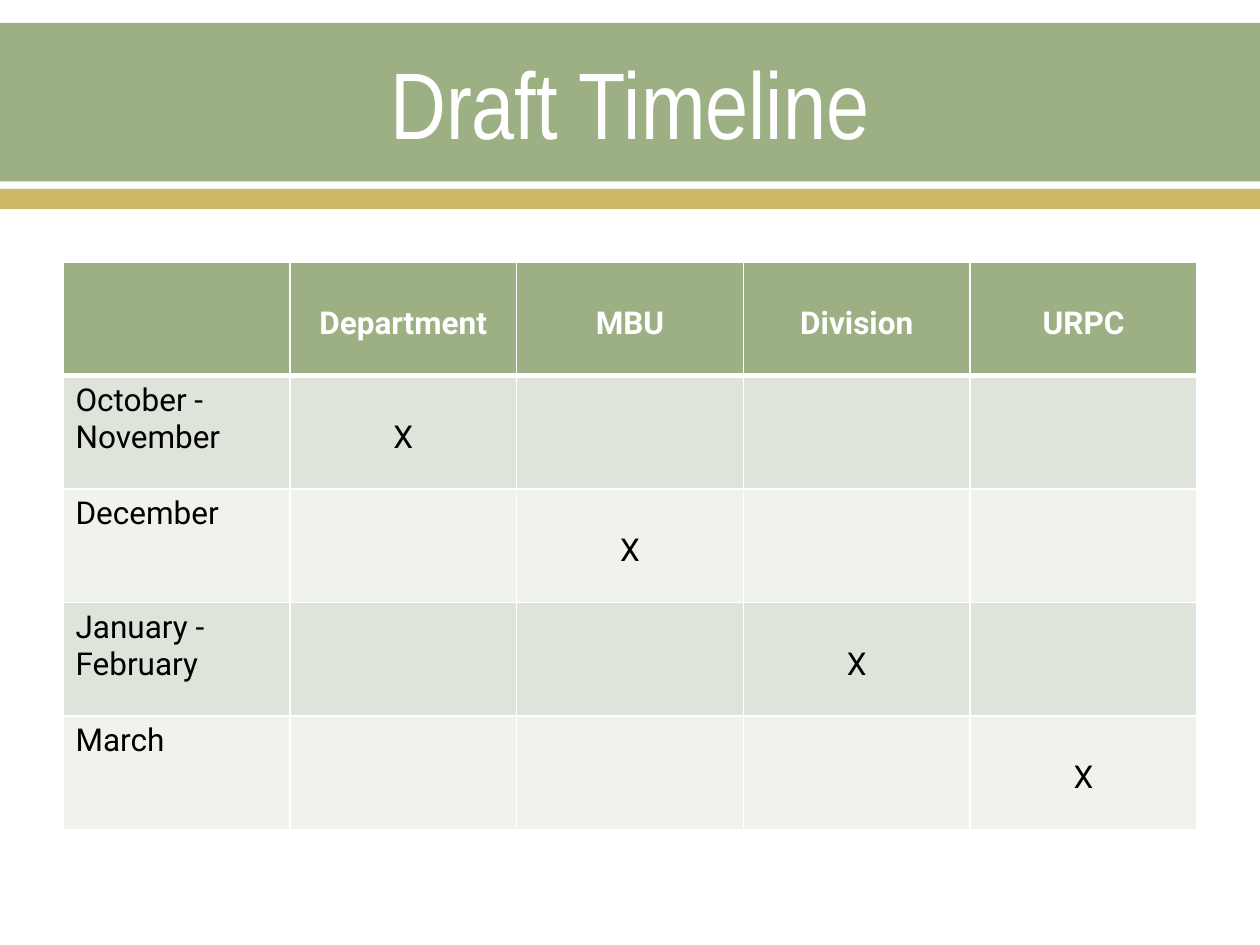
"""Build the Draft Timeline slide with a table of months and review levels."""
from lxml import etree
from pptx import Presentation
from pptx import util as u
from pptx.dml.color import RGBColor
from pptx.enum import shapes, text
from pptx.oxml.ns import qn

GREEN, GOLD, WHITE, BLACK = "9CB084", "CEB966", "FFFFFF", "000000"
BAND_FILLS = ["DEE4D9", "EFF2ED"]
LEVELS = ["Department", "MBU", "Division", "URPC"]
MONTHS = ["October - November", "December", "January - February", "March"]


def paint(color_format, color):
    color_format.rgb = RGBColor.from_string(color)


def write(paragraph, words, color, font_format, paragraph_format):
    run = paragraph.add_run()
    run.text = words
    paint_target = run.font.color
    paint(paint_target, color)
    for name, value in font_format.items():
        setattr(run.font, name, value)
    for name, value in paragraph_format.items():
        setattr(paragraph, name, value)


presentation = Presentation()
presentation.slide_width = u.Cm(25.4)
presentation.slide_height = u.Cm(19.05)
slide = presentation.slides.add_slide(presentation.slide_layouts[6])

for top, height, color in [(0.46, 3.2, GREEN), (3.81, 0.41, GOLD)]:
    band = slide.shapes.add_shape(
        shapes.MSO_SHAPE.RECTANGLE, 0, u.Cm(top), presentation.slide_width, u.Cm(height))
    band.shadow.inherit = False
    band.fill.solid()
    paint(band.fill.fore_color, color)
    band.line.fill.background()

centered = {"alignment": text.PP_ALIGN.CENTER}
title = slide.shapes.add_textbox(u.Cm(1.27), u.Cm(0.51), u.Cm(22.86), u.Cm(3.1))
title.text_frame.word_wrap = True
title.text_frame.vertical_anchor = text.MSO_ANCHOR.MIDDLE
write(title.text_frame.paragraphs[0], "Draft Timeline", WHITE,
      {"name": "Arial Narrow", "size": u.Pt(54)}, centered)

rows = [[""] + LEVELS]
for index, month in enumerate(MONTHS):
    rows.append([month] + ["X" if column == index else "" for column in range(len(LEVELS))])

table = slide.shapes.add_table(
    len(rows), len(rows[0]), u.Cm(1.27), u.Cm(5.29), u.Cm(22.86), u.Cm(11.43)).table
for row_index, row in enumerate(rows):
    header = row_index == 0
    fill = GREEN if header else BAND_FILLS[(row_index - 1) % 2]
    widths = {"a:lnL": 1, "a:lnR": 1,
              "a:lnT": 3 if row_index == 1 else 1,
              "a:lnB": 3 if header else 1}
    font_format = {"name": "Roboto", "size": u.Pt(18), "bold": header}
    for column_index, words in enumerate(row):
        cell = table.cell(row_index, column_index)
        cell.fill.solid()
        paint(cell.fill.fore_color, fill)
        properties = cell._tc.get_or_add_tcPr()
        for position, (tag, width) in enumerate(widths.items()):
            border = etree.Element(qn(tag), w=str(u.Pt(width)))
            solid = etree.SubElement(border, qn("a:solidFill"))
            etree.SubElement(solid, qn("a:srgbClr"), val=WHITE)
            properties.insert(position, border)
        if words:
            layout = {**centered, "line_spacing": 2.0} if column_index else {}
            write(cell.text_frame.paragraphs[0], words, WHITE if header else BLACK,
                  font_format, layout)

presentation.save("out.pptx")
